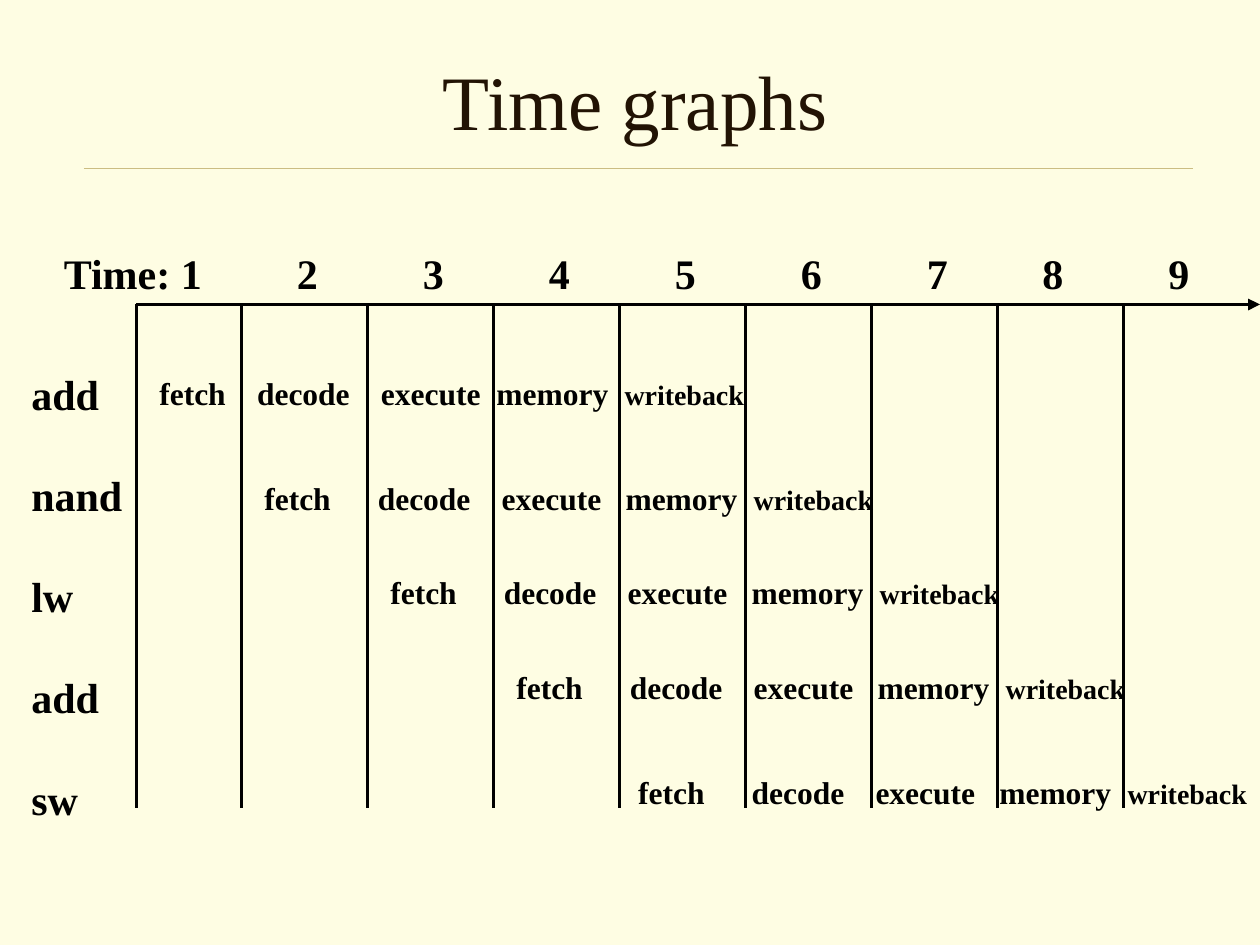
import pptx
import pptx.dml.color
import pptx.enum.shapes
import pptx.enum.text
import pptx.oxml.xmlchemy
import pptx.util

RGB = pptx.dml.color.RGBColor
CREAM = RGB(0xFE, 0xFD, 0xE3)
BROWN = RGB(0x22, 0x13, 0x04)
SAND = RGB(0xCB, 0xBD, 0x83)
BLACK = RGB(0, 0, 0)
FONT = "Times New Roman"

TITLE = "Time graphs"
TIMES = ["Time: 1", "2", "3", "4", "5", "6", "7", "8", "9"]
NAMES = ["add", "nand", "lw", "add", "sw"]
STAGES = ["fetch", "decode", "execute", "memory", "writeback"]
TIGHT = [9.3, 21.1, 32.1, 44.3]
LOOSE = [10.8, 22.6, 34.4, 46.6]
ROWS = [
    (14, 35, TIGHT),
    (24, 45, LOOSE),
    (36, 54, LOOSE),
    (48, 63, LOOSE),
    (59.6, 73, LOOSE),
]

WIDE = 120
STEP = 12
LEFT, FIRST = 13, 23
TOP, BASE = 29, 77

deck = pptx.Presentation()
deck.slide_width = pptx.util.Inches(10)
deck.slide_height = pptx.util.Inches(7.5)
UNIT = deck.slide_width / WIDE
slide = deck.slides.add_slide(deck.slide_layouts[6])
slide.background.fill.solid()
slide.background.fill.fore_color.rgb = CREAM


def grid(*cells):
    return [round(cell * UNIT) for cell in cells]


def make_tag(name, **attrs):
    tag = pptx.oxml.xmlchemy.OxmlElement(name)
    for key, value in attrs.items():
        tag.set(key, value)
    return tag


def add_line(x1, y1, x2, y2, color=BLACK, width=2.25, arrow=False):
    kind = pptx.enum.shapes.MSO_CONNECTOR.STRAIGHT
    line = slide.shapes.add_connector(kind, *grid(x1, y1, x2, y2))
    line.line.color.rgb = color
    line.line.width = pptx.util.Pt(width)
    if arrow:
        line.line._get_or_add_ln().append(
            make_tag("a:tailEnd", type="triangle"))
    line._element.spPr.append(make_tag("a:effectLst"))


def add_box(x, y, wide, high, wrap=False):
    frame = slide.shapes.add_textbox(*grid(x, y, wide, high)).text_frame
    frame.word_wrap = wrap
    if not wrap:
        frame.margin_right = 0
    return frame


def add_run(para, text, size, color=BLACK, bold=True):
    run = para.add_run()
    run.text = text
    run.font.name = FONT
    run.font.size = pptx.util.Pt(size)
    run.font.bold = bold
    run.font.color.rgb = color


def set_tabs(para, stops):
    tabs = make_tag("a:tabLst")
    for stop in grid(*stops):
        tabs.append(make_tag("a:tab", pos=str(stop), algn="l"))
    para._p.get_or_add_pPr().append(tabs)


add_line(8, 16, 113.6, 16, SAND, 0.25)
head = add_box(8, 4, 105, 11, True)
head.vertical_anchor = pptx.enum.text.MSO_ANCHOR.MIDDLE
head.paragraphs[0].alignment = pptx.enum.text.PP_ALIGN.CENTER
add_run(head.paragraphs[0], TITLE, 44, BROWN, False)

add_line(LEFT, TOP, WIDE, TOP, arrow=True)
for x in [LEFT] + [FIRST + STEP * i for i in range(len(TIMES) - 1)]:
    add_line(x, TOP, x, BASE)

scale = add_box(4.9, FIRST, 114, 6).paragraphs[0]
set_tabs(scale, [22.2 + STEP * i - (i > 5) for i in range(len(TIMES) - 1)])
add_run(scale, "\t".join(TIMES), 24)

names = add_box(1.8, 34.5, 12, 44)
for i, name in enumerate(NAMES):
    para = names.add_paragraph() if i else names.paragraphs[0]
    para.space_after = pptx.util.Pt(29)
    add_run(para, name, 24)

for x, y, stops in ROWS:
    para = add_box(x, y, 60.4, 4.8).paragraphs[0]
    set_tabs(para, stops)
    add_run(para, "\t".join(STAGES[:-1]) + "\t", 18)
    add_run(para, STAGES[-1], 16)

deck.save("out.pptx")
